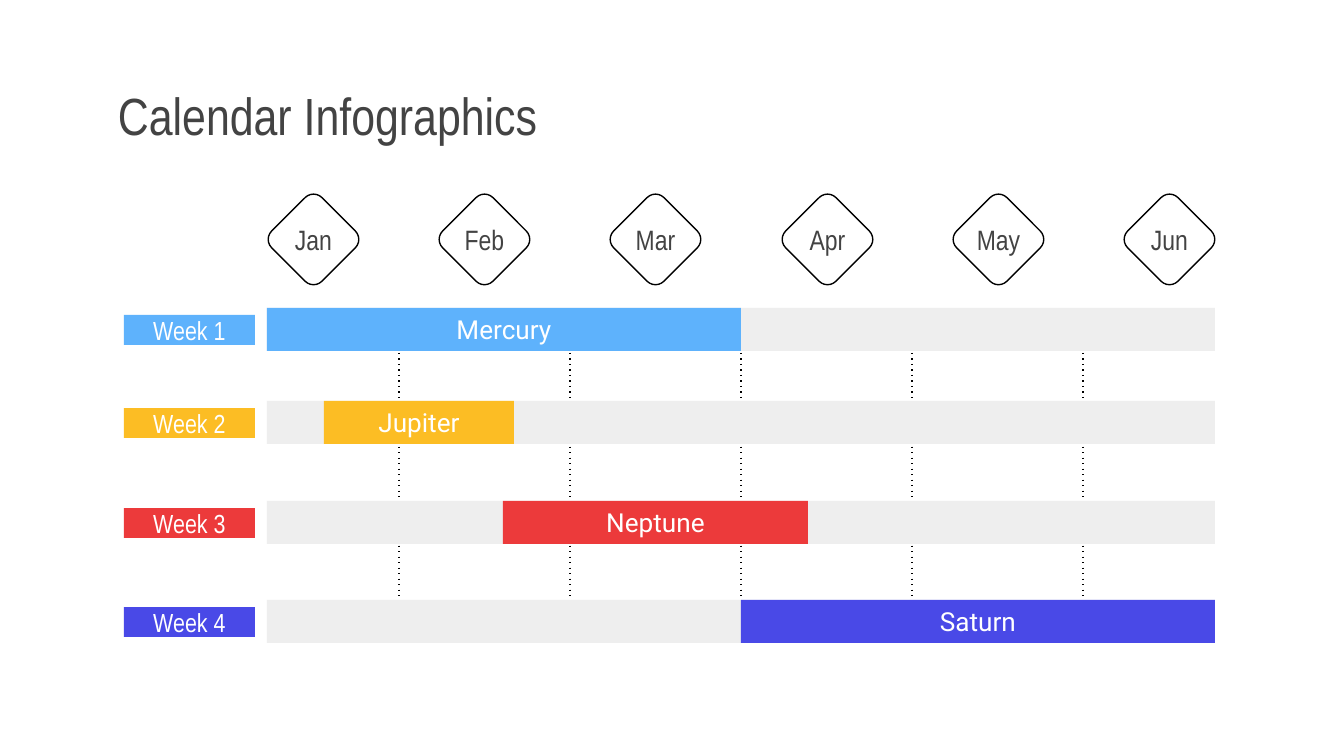
from dataclasses import dataclass

from lxml.etree import SubElement
from pptx import Presentation
from pptx.dml.color import RGBColor
from pptx.enum.shapes import MSO_CONNECTOR as Connector, MSO_SHAPE as Shape
from pptx.enum.text import MSO_ANCHOR as Anchor, PP_ALIGN as Align
from pptx.oxml.ns import qn
from pptx.util import Emu, Pt

EMU_PER_PX = 9144000 / 1344
SLIDE_WIDTH, SLIDE_HEIGHT = 1344, 756
INSET = 13


@dataclass(frozen=True)
class Theme:
    ink: str = "434343"
    white: str = "FFFFFF"
    black: str = "000000"
    track: str = "EEEEEE"
    heading_font: str = "Arial Narrow"
    body_font: str = "Roboto"
    title_size: int = 28
    month_size: int = 15
    bar_size: int = 14
    line_width: float = 0.75


@dataclass(frozen=True)
class Box:
    left: int
    top: int
    width: int
    height: int


@dataclass(frozen=True)
class Week:
    label: str
    planet: str
    color: str
    top: int
    start: int
    length: int


THEME = Theme()
TITLE_BOX = Box(105, 79, 1136, 71)
MONTHS = ("Jan", "Feb", "Mar", "Apr", "May", "Jun")
FIRST_MONTH_X, LAST_MONTH_X, MONTH_Y = 313, 1169, 239
DIAMOND_SIZE = 71
MONTH_WIDTH, LABEL_HEIGHT = 93, 30
FIRST_GRID_X, GRID_STEP = 399, 171
GRID_TOP, GRID_BOTTOM = 320, 637
TRACK_LEFT, TRACK_WIDTH, TRACK_HEIGHT = 267, 948, 43
LABEL_LEFT, LABEL_WIDTH, LABEL_DROP = 124, 131, 7
WEEKS = (
    Week("Week 1", "Mercury", "5EB2FC", 308, 267, 474),
    Week("Week 2", "Jupiter", "FCBD24", 401, 324, 190),
    Week("Week 3", "Neptune", "EC3A3B", 501, 503, 305),
    Week("Week 4", "Saturn", "4949E7", 600, 741, 474),
)


def px(length: int) -> Emu:
    return Emu(round(length * EMU_PER_PX))


def rgb(color: str) -> RGBColor:
    return RGBColor.from_string(color)


def place(box: Box) -> tuple[Emu, Emu, Emu, Emu]:
    return px(box.left), px(box.top), px(box.width), px(box.height)


def write(shape, text: str, size: int, font: str, color: str,
          align: Align = Align.CENTER) -> None:
    frame = shape.text_frame
    frame.text = text
    frame.word_wrap = True
    frame.vertical_anchor = Anchor.MIDDLE
    frame.margin_left = frame.margin_right = px(INSET)
    frame.margin_top = frame.margin_bottom = px(INSET)
    paragraph = frame.paragraphs[0]
    paragraph.alignment = align
    run_font = paragraph.runs[0].font
    run_font.size = Pt(size)
    run_font.name = font
    run_font.color.rgb = rgb(color)


def draw_title(slide) -> None:
    shape = slide.shapes.add_textbox(*place(TITLE_BOX))
    write(shape, "Calendar Infographics", THEME.title_size,
          THEME.heading_font, THEME.ink, Align.LEFT)


def draw_grid_line(slide, x: int) -> None:
    connector = slide.shapes.add_connector(
        Connector.STRAIGHT, px(x), px(GRID_TOP), px(x), px(GRID_BOTTOM))
    connector.line.color.rgb = rgb(THEME.black)
    connector.line.width = Pt(THEME.line_width)
    properties = connector._element.spPr
    SubElement(properties.find(qn("a:ln")), qn("a:prstDash"), val="dot")
    SubElement(properties, qn("a:effectLst"))


def draw_month(slide, name: str, center_x: int) -> None:
    half = DIAMOND_SIZE // 2
    diamond = slide.shapes.add_shape(Shape.ROUNDED_RECTANGLE, *place(
        Box(center_x - half, MONTH_Y - half, DIAMOND_SIZE, DIAMOND_SIZE)))
    diamond.rotation = 45
    diamond.shadow.inherit = False
    diamond.fill.background()
    diamond.line.color.rgb = rgb(THEME.black)
    diamond.line.width = Pt(THEME.line_width)
    caption = slide.shapes.add_textbox(*place(
        Box(center_x - MONTH_WIDTH // 2, MONTH_Y - LABEL_HEIGHT // 2,
            MONTH_WIDTH, LABEL_HEIGHT)))
    write(caption, name, THEME.month_size, THEME.heading_font, THEME.ink)


def draw_bar(slide, box: Box, color: str):
    shape = slide.shapes.add_shape(Shape.RECTANGLE, *place(box))
    shape.shadow.inherit = False
    shape.fill.solid()
    shape.fill.fore_color.rgb = rgb(color)
    shape.line.fill.background()
    return shape


def draw_week(slide, week: Week) -> None:
    """Draw the grey track, the week label and the planet bar of one row."""
    draw_bar(slide, Box(TRACK_LEFT, week.top, TRACK_WIDTH, TRACK_HEIGHT), THEME.track)
    label = draw_bar(slide, Box(LABEL_LEFT, week.top + LABEL_DROP,
                                LABEL_WIDTH, LABEL_HEIGHT), week.color)
    write(label, week.label, THEME.bar_size, THEME.heading_font, THEME.white)
    bar = draw_bar(slide, Box(week.start, week.top, week.length, TRACK_HEIGHT), week.color)
    write(bar, week.planet, THEME.bar_size, THEME.body_font, THEME.white)


def main() -> None:
    presentation = Presentation()
    presentation.slide_width = px(SLIDE_WIDTH)
    presentation.slide_height = px(SLIDE_HEIGHT)
    slide = presentation.slides.add_slide(presentation.slide_layouts[6])
    draw_title(slide)
    gaps = len(MONTHS) - 1
    for index in range(gaps):
        draw_grid_line(slide, FIRST_GRID_X + index * GRID_STEP)
    for index, name in enumerate(MONTHS):
        offset = round(index * (LAST_MONTH_X - FIRST_MONTH_X) / gaps)
        draw_month(slide, name, FIRST_MONTH_X + offset)
    for week in WEEKS:
        draw_week(slide, week)
    presentation.save("out.pptx")


if __name__ == "__main__":
    main()
